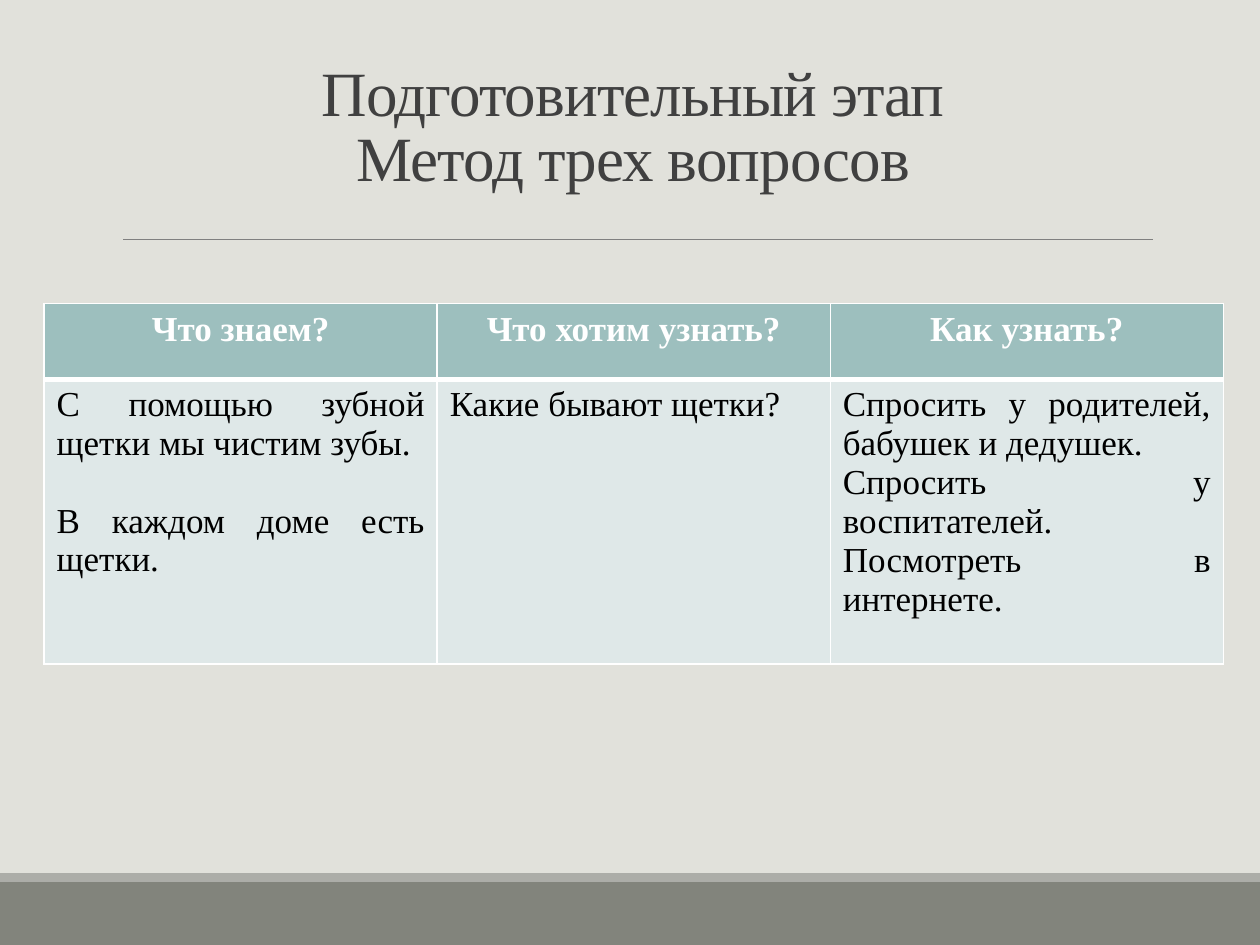
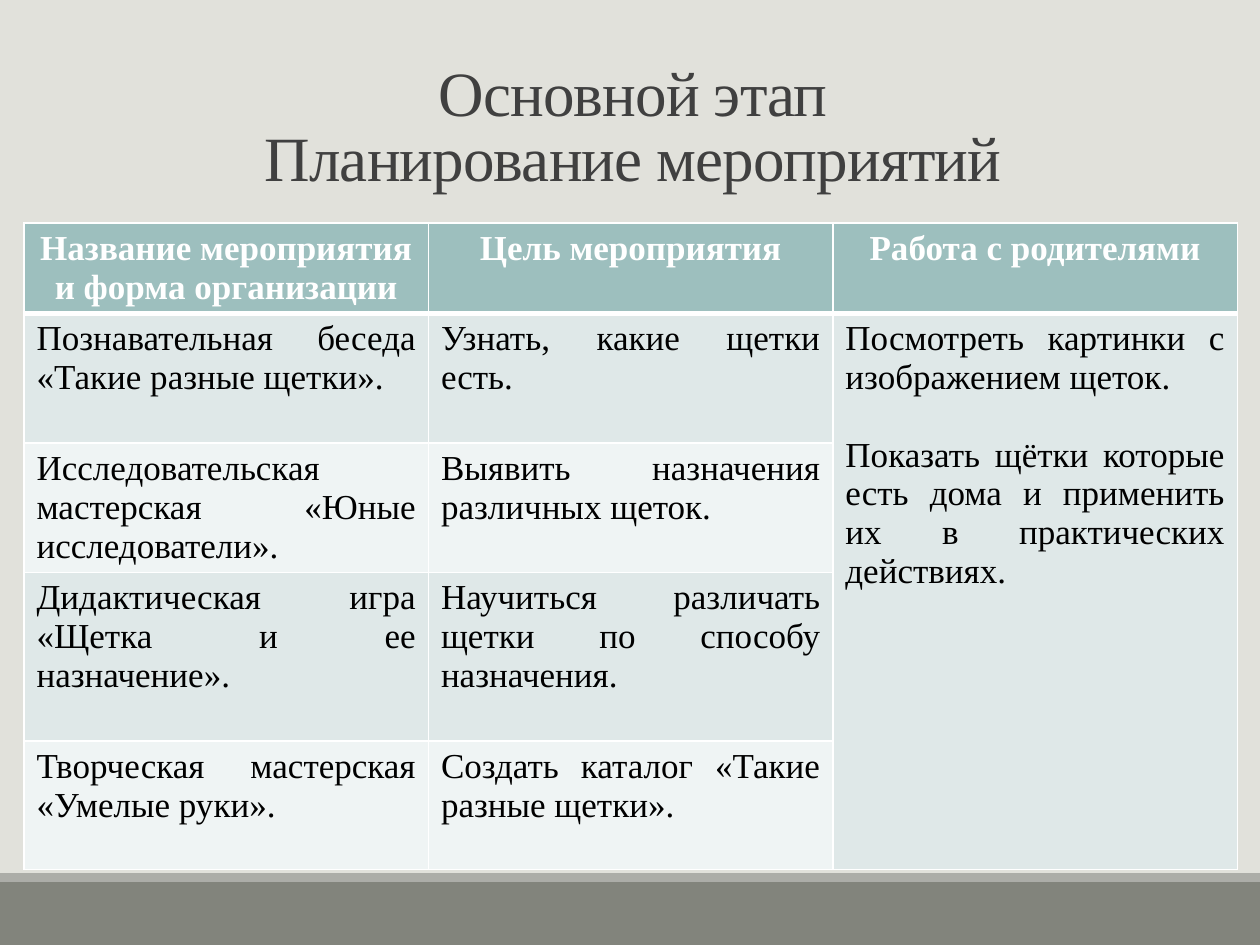
from pptx import Presentation
from pptx.dml.color import RGBColor
from pptx.enum.shapes import MSO_CONNECTOR, MSO_SHAPE
from pptx.enum.text import MSO_ANCHOR, MSO_AUTO_SIZE, PP_ALIGN
from pptx.oxml.ns import qn
from pptx.util import Inches, Pt
from lxml import etree

RECT = MSO_SHAPE.RECTANGLE
STRAIGHT = MSO_CONNECTOR.STRAIGHT
BOTTOM = MSO_ANCHOR.BOTTOM
NO_AUTOFIT = MSO_AUTO_SIZE.NONE
CENTER, JUSTIFY = PP_ALIGN.CENTER, PP_ALIGN.JUSTIFY

BACKGROUND = RGBColor(0xE1, 0xE1, 0xDB)
BAND = RGBColor(0x82, 0x84, 0x7C)
BAND_EDGE = RGBColor(0xAC, 0xAD, 0xA8)
RULE = RGBColor(0x80, 0x80, 0x80)
TITLE = RGBColor(0x40, 0x40, 0x40)
WHITE = RGBColor(0xFF, 0xFF, 0xFF)
BLACK = RGBColor(0, 0, 0)
HEADER_FILL = RGBColor(0x9D, 0xBF, 0xBE)
ROW_FILLS = (RGBColor(0xDF, 0xE8, 0xE8), RGBColor(0xEF, 0xF4, 0xF4))

FONT = "Times New Roman"
TITLE_ONLY = 5
BLOCK_GAP = Pt(22)


class Deck:
    """Holds the shared style and the current slide."""

    def __init__(self):
        self.prs = Presentation()
        self.prs.slide_width, self.prs.slide_height = Inches(10), Inches(7.5)
        fill = self.prs.slide_master.background.fill
        fill.solid()
        fill.fore_color.rgb = BACKGROUND
        self.s = None

    def slide(self, title):
        self.s = self.prs.slides.add_slide(self.prs.slide_layouts[TITLE_ONLY])
        self.band(7, 0.5, BAND)
        self.band(6.93, 0.07, BAND_EDGE)
        self.title(title)

    def band(self, top, height, color):
        sp = self.s.shapes.add_shape(RECT, 0, Inches(top), Inches(10), Inches(height))
        sp.shadow.inherit = False
        sp.fill.solid()
        sp.fill.fore_color.rgb = color
        sp.line.fill.background()

    def title(self, text):
        sp = self.s.shapes.title
        sp.left, sp.top = Inches(0.9), Inches(0.83)
        sp.width, sp.height = Inches(8.25), Inches(0.76)
        tf = sp.text_frame
        tf.word_wrap = True
        tf.auto_size = NO_AUTOFIT
        tf.vertical_anchor = BOTTOM
        p = tf.paragraphs[0]
        p.text = text
        p.line_spacing = 0.85
        self.style(p, 36, TITLE, CENTER)
        # Tighter letter spacing, in hundredths of a point
        p._p.pPr.find(qn("a:defRPr")).set("spc", "-50")

    def rule(self):
        line = self.s.shapes.add_connector(
            STRAIGHT, Inches(0.98), Inches(1.9), Inches(9.15), Inches(1.9))
        line.line.color.rgb = RULE
        line.line.width = Pt(0.5)
        etree.SubElement(line._element.spPr, qn("a:effectLst"))

    def table(self, left, top, col_width, row_heights, rows):
        cols = len(rows[0])
        table = self.s.shapes.add_table(
            len(rows), cols, Inches(left), Inches(top),
            Inches(col_width * cols), Inches(sum(row_heights))).table
        for col in table.columns:
            col.width = Inches(col_width)
        for i, (height, texts) in enumerate(zip(row_heights, rows)):
            table.rows[i].height = Inches(height)
            for j, text in enumerate(texts):
                self.cell(table.cell(i, j), text, i)
        return table

    def cell(self, cell, text, row):
        header = row == 0
        self.borders(cell, top=3 if row == 1 else 1, bottom=3 if header else 1)
        cell.fill.solid()
        cell.fill.fore_color.rgb = HEADER_FILL if header else ROW_FILLS[(row - 1) % 2]
        tf = cell.text_frame
        # An empty line in the text starts a new block, set off by spacing
        for b, block in enumerate(text.split("\n\n")):
            for n, line in enumerate(block.split("\n")):
                p = tf.add_paragraph() if b or n else tf.paragraphs[0]
                p.text = line
                if b and n == 0:
                    p.space_before = BLOCK_GAP
                self.style(p, 20, WHITE if header else BLACK,
                           CENTER if header else JUSTIFY, header)

    def borders(self, cell, top, bottom):
        tcPr = cell._tc.get_or_add_tcPr()
        for side, width in (("L", 1), ("R", 1), ("T", top), ("B", bottom)):
            ln = etree.SubElement(tcPr, qn(f"a:ln{side}"), w=str(Pt(width)))
            fill = etree.SubElement(ln, qn("a:solidFill"))
            etree.SubElement(fill, qn("a:srgbClr"), val=str(WHITE))

    def style(self, p, size, color, align, bold=False):
        p.alignment = align
        p.font.name = FONT
        p.font.size = Pt(size)
        p.font.bold = bold
        p.font.color.rgb = color


def main():
    deck = Deck()

    # Three questions
    deck.slide("Подготовительный этап\vМетод трех вопросов")
    deck.rule()
    deck.table(0.35, 2.41, 3.12, (0.6, 2.26), (
        ("Что знаем?", "Что хотим узнать?", "Как узнать?"),
        ("С помощью зубной щетки мы чистим зубы.\n\nВ каждом доме есть щетки.",
         "Какие бывают щетки?",
         "Спросить у родителей, бабушек и дедушек.\n"
         "Спросить у воспитателей.\nПосмотреть в интернете."),
    ))

    # Plan of activities; work with parents spans all activities
    deck.slide("Основной этап\vПланирование мероприятий")
    plan = deck.table(0.19, 1.77, 3.21, (0.71, 1.03, 1.02, 1.34, 1.02), (
        ("Название мероприятия и форма организации", "Цель мероприятия",
         "Работа с родителями"),
        ("Познавательная беседа «Такие разные щетки».", "Узнать, какие щетки есть.",
         "Посмотреть картинки с изображением щеток.\n\n"
         "Показать щётки которые есть дома и применить их в практических действиях."),
        ("Исследовательская мастерская «Юные исследователи».",
         "Выявить назначения различных щеток.", ""),
        ("Дидактическая игра «Щетка и ее назначение».",
         "Научиться различать щетки по способу назначения.", ""),
        ("Творческая мастерская «Умелые руки».",
         "Создать каталог «Такие разные щетки».", ""),
    ))
    plan.cell(1, 2).merge(plan.cell(4, 2))

    deck.prs.save("out.pptx")


if __name__ == "__main__":
    main()
